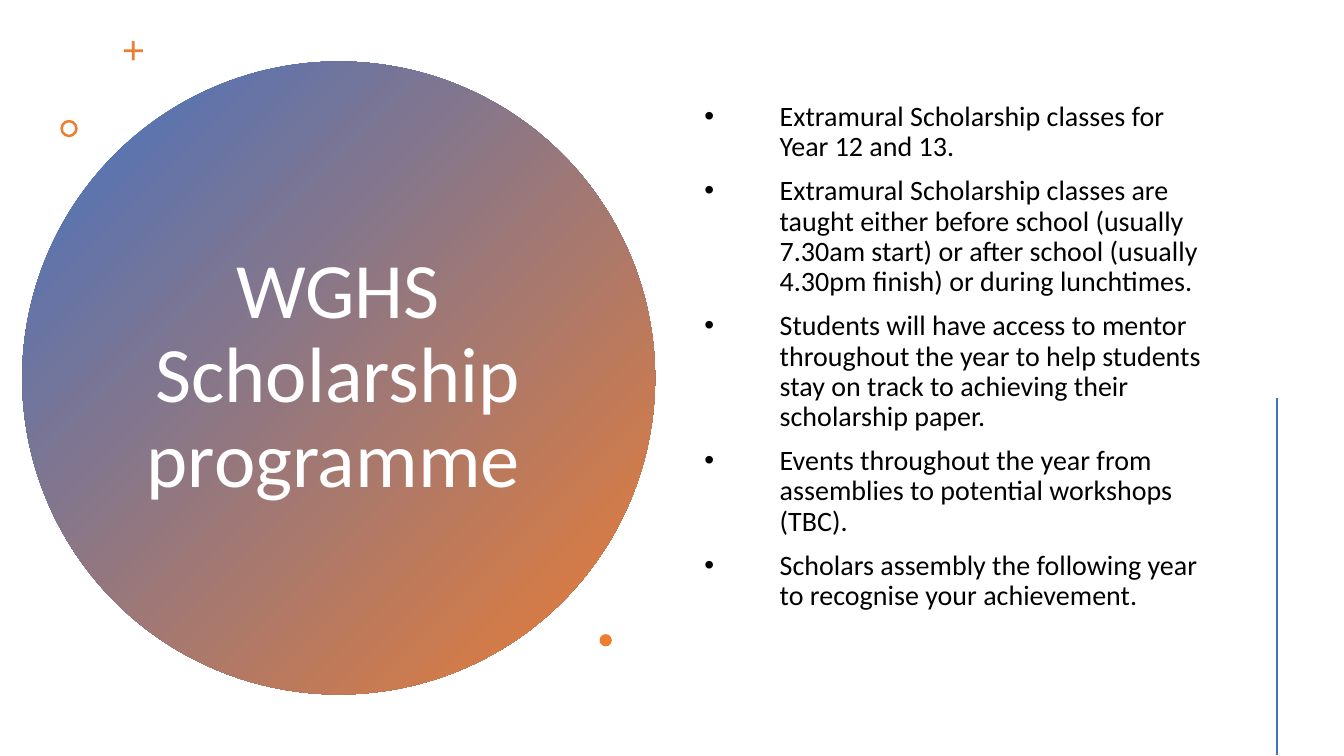
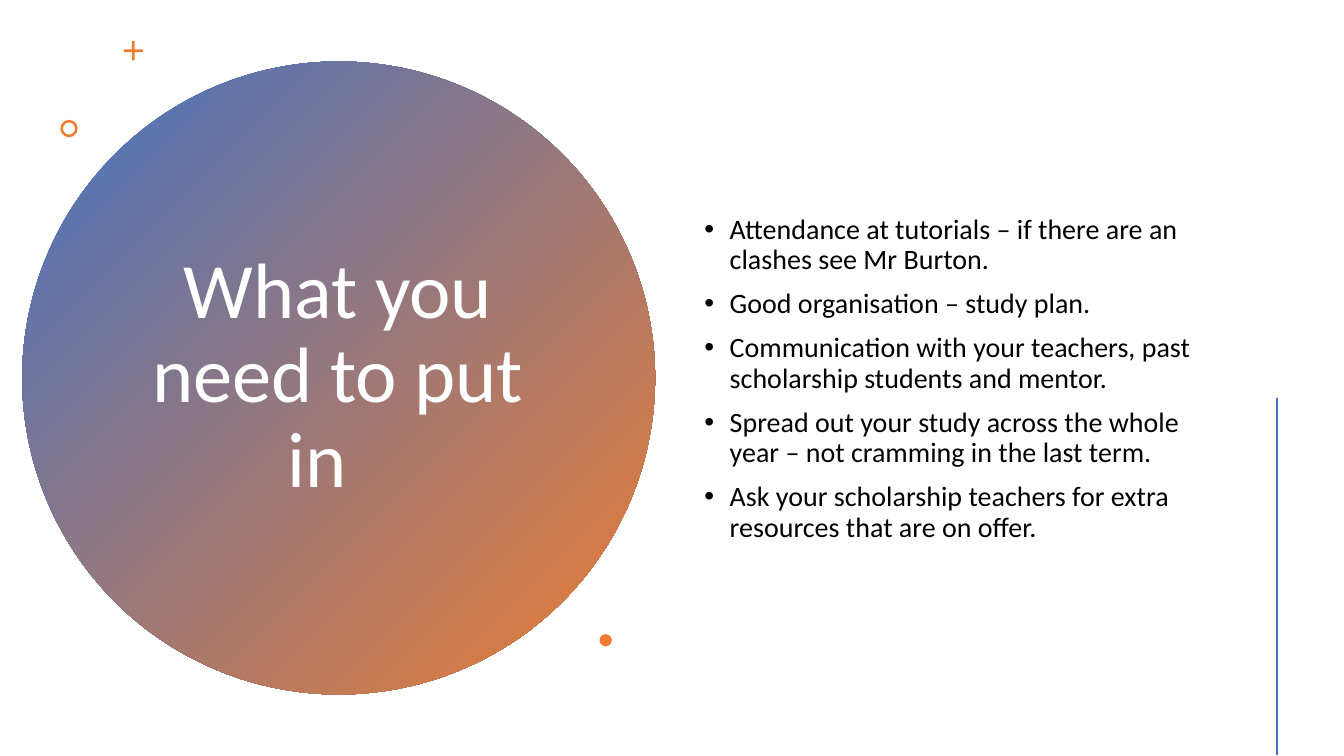
"""Build two slides on a scholarship programme."""
from dataclasses import dataclass

import lxml.etree
import pptx
import pptx.dml.color
import pptx.enum.shapes
import pptx.enum.text
import pptx.oxml.ns
import pptx.util

Cm = pptx.util.Cm
Pt = pptx.util.Pt
Kind = pptx.enum.shapes.MSO_SHAPE
qn = pptx.oxml.ns.qn

FONT = "Calibri"
BLUE, ORANGE, WHITE, BLACK = "4472C4", "ED7D31", "FFFFFF", "000000"


@dataclass(frozen=True)
class Box:
    left: float
    top: float
    width: float
    height: float

    def sides(self) -> list[pptx.util.Length]:
        return [Cm(n) for n in (self.left, self.top, self.width, self.height)]


@dataclass(frozen=True)
class Mark:
    kind: Kind
    left: float
    top: float
    size: float
    adjust: float | None = None


@dataclass(frozen=True)
class Page:
    title: str
    points: list[str]
    indent: float
    bottom: float = 0.13


DISC = Mark(Kind.OVAL, 0.56, 1.55, 15.95)
TITLE = Box(3.45, 3.58, 10.13, 11.86)
BODY = Box(17.5, 1.45, 13.26, 16.21)
MARKS = [
    Mark(Kind.CROSS, 3.12, 1.04, 0.48, 0.43),
    Mark(Kind.DONUT, 1.52, 3.02, 0.44, 0.15),
    Mark(Kind.OVAL, 15.11, 15.98, 0.31),
]

PAGES = [
    Page("WGHS Scholarship programme\t", [
        "Extramural Scholarship classes for Year 12 and 13.",
        "Extramural Scholarship classes are taught either before school "
        "(usually 7.30am start) or after school (usually 4.30pm finish) "
        "or during lunchtimes.",
        "Students will have access to mentor throughout the year to help "
        "students stay on track to achieving their scholarship paper.",
        "Events throughout the year from assemblies to potential workshops (TBC).",
        "Scholars assembly the following year to recognise your achievement.",
    ], indent=1.9, bottom=1.25),
    Page("What you need to put in\t", [
        "Attendance at tutorials – if there are an clashes see Mr Burton.",
        "Good organisation – study plan.",
        "Communication with your teachers, past scholarship students and mentor.",
        "Spread out your study across the whole year – not cramming in the last term.",
        "Ask your scholarship teachers for extra resources that are on offer.",
    ], indent=0.64),
]


def tint(code: str) -> pptx.dml.color.RGBColor:
    """Turn a hex string into a colour."""
    return pptx.dml.color.RGBColor.from_string(code)


def draw_mark(slide: pptx.slide.Slide, mark: Mark) -> pptx.shapes.autoshape.Shape:
    """Draw a plain orange mark."""
    box = Box(mark.left, mark.top, mark.size, mark.size)
    shape = slide.shapes.add_shape(mark.kind, *box.sides())
    shape.shadow.inherit = False
    shape.fill.solid()
    shape.fill.fore_color.rgb = tint(ORANGE)
    shape.line.fill.background()
    if mark.adjust is not None:
        shape.adjustments[0] = mark.adjust
    return shape


def draw_disc(slide: pptx.slide.Slide) -> None:
    """Draw the blended disc behind the title."""
    disc = draw_mark(slide, DISC)
    disc.fill.gradient()
    disc.fill.gradient_angle = 315
    for stop, code in zip(disc.fill.gradient_stops, (BLUE, ORANGE)):
        stop.color.rgb = tint(code)
    slide.shapes.title.element.addprevious(disc.element)


def set_frame(frame: pptx.text.text.TextFrame, text: str, size: float,
              code: str, bottom: float = 0.13) -> None:
    """Fill a text frame and style its lines."""
    frame.text = text
    frame.word_wrap = True
    frame.auto_size = pptx.enum.text.MSO_AUTO_SIZE.NONE
    frame.vertical_anchor = pptx.enum.text.MSO_ANCHOR.MIDDLE
    frame.margin_left = frame.margin_right = Cm(0.25)
    frame.margin_top, frame.margin_bottom = Cm(0.13), Cm(bottom)
    for para in frame.paragraphs:
        para.line_spacing = 0.9
        for run in para.runs:
            run.font.name = FONT
            run.font.size = Pt(size)
            run.font.color.rgb = tint(code)


def draw_title(slide: pptx.slide.Slide, text: str) -> None:
    """Place the title on the disc."""
    title = slide.shapes.title
    title.left, title.top, title.width, title.height = TITLE.sides()
    set_frame(title.text_frame, text, 56, WHITE)
    title.text_frame.paragraphs[0].alignment = pptx.enum.text.PP_ALIGN.CENTER


def draw_points(slide: pptx.slide.Slide, page: Page) -> None:
    """Write the bullet list."""
    frame = slide.shapes.add_textbox(*BODY.sides()).text_frame
    set_frame(frame, "\n".join(page.points), 20, BLACK, page.bottom)
    for rank, para in enumerate(frame.paragraphs):
        para.space_before = Pt(10 if rank else 0)
        props = para._p.get_or_add_pPr()
        props.set("marL", str(Cm(page.indent)))
        props.set("indent", str(-Cm(page.indent)))
        hue = lxml.etree.SubElement(props, qn("a:buClr"))
        lxml.etree.SubElement(hue, qn("a:srgbClr"), val=BLACK)
        lxml.etree.SubElement(props, qn("a:buFont"), typeface="Arial")
        lxml.etree.SubElement(props, qn("a:buChar"), char="•")


def draw_rule(slide: pptx.slide.Slide) -> None:
    """Draw the blue line at the right edge."""
    rule = slide.shapes.add_connector(
        pptx.enum.shapes.MSO_CONNECTOR.STRAIGHT,
        Cm(32.18), Cm(10.03), Cm(32.18), Cm(19.03))
    rule.line.color.rgb = tint(BLUE)
    rule.line.width = Pt(2)
    lxml.etree.SubElement(rule.element.spPr, qn("a:effectLst"))


def main() -> None:
    """Build and save the deck."""
    deck = pptx.Presentation()
    deck.slide_width, deck.slide_height = Cm(33.87), Cm(19.05)
    for page in PAGES:
        slide = deck.slides.add_slide(deck.slide_layouts[5])
        draw_disc(slide)
        draw_title(slide, page.title)
        for mark in MARKS:
            draw_mark(slide, mark)
        draw_points(slide, page)
        draw_rule(slide)
    deck.save("out.pptx")


if __name__ == "__main__":
    main()
